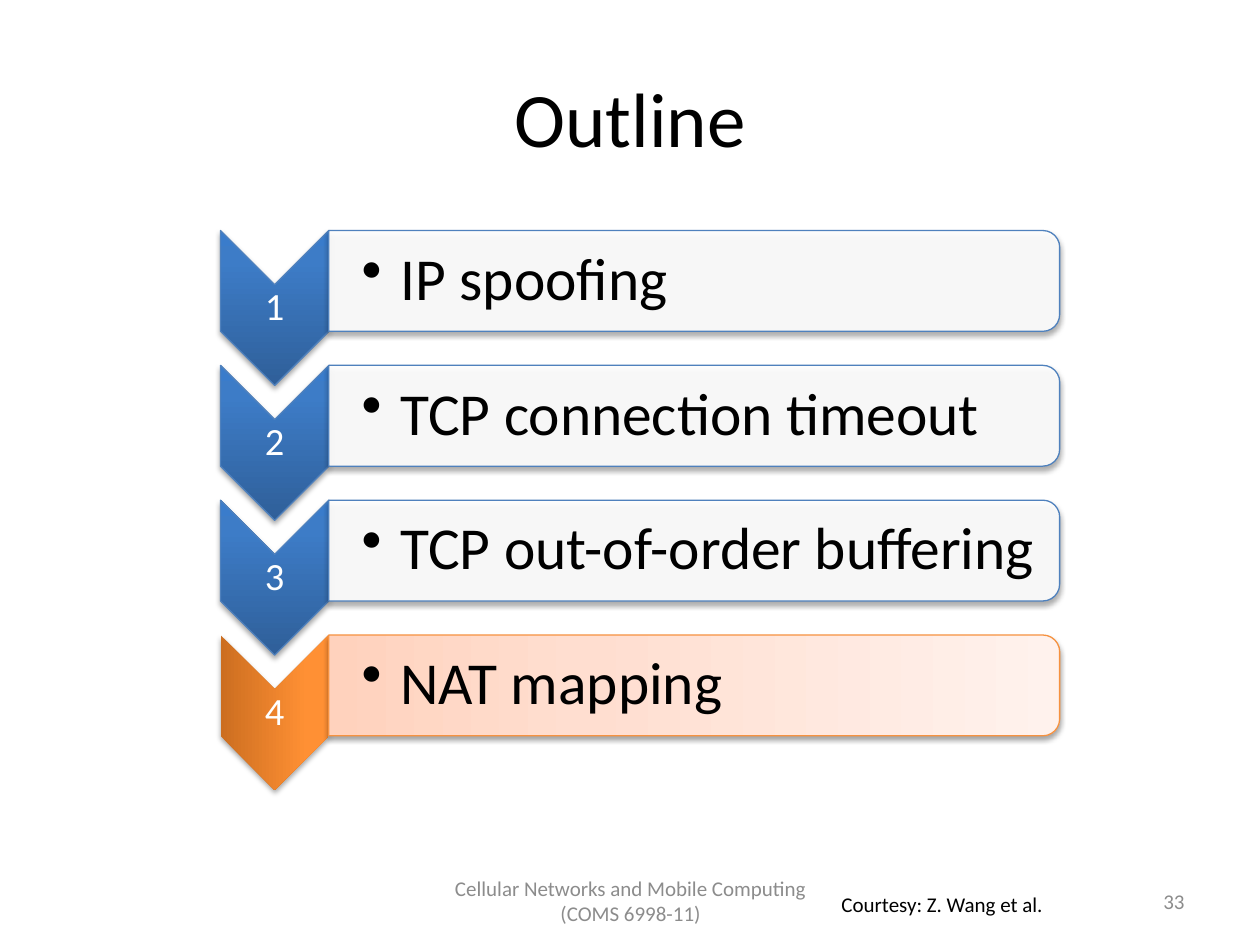
from lxml import etree
from pptx import Presentation
from pptx.dml.color import RGBColor
from pptx.enum import shapes, text
from pptx.oxml import ns
from pptx.util import Inches, Pt

FONT = "Calibri"
BLACK = RGBColor(0x00, 0x00, 0x00)
WHITE = RGBColor(0xFF, 0xFF, 0xFF)
GRAY = RGBColor(0x8C, 0x8C, 0x8C)
BLUE = RGBColor(0x4F, 0x81, 0xBD)
ORANGE = RGBColor(0xF6, 0x92, 0x40)
BLUE_STOPS = [(0, RGBColor(0x2F, 0x5F, 0x99)), (80, RGBColor(0x3D, 0x7C, 0xC7)),
              (100, RGBColor(0x3A, 0x7C, 0xCB))]
ORANGE_STOPS = [(0, RGBColor(0xCC, 0x6E, 0x20)), (80, RGBColor(0xFF, 0x90, 0x34)),
                (100, RGBColor(0xFF, 0x91, 0x36))]
PEACH_STOPS = [(0, RGBColor(0xFF, 0xD2, 0xBD)), (35, RGBColor(0xFF, 0xDE, 0xD0)),
               (100, RGBColor(0xFF, 0xF2, 0xED))]

TOPICS = ["IP spoofing", "TCP connection timeout",
          "TCP out-of-order buffering", "NAT mapping"]
CURRENT = 4
CHEVRON_WIDTH, CHEVRON_HEIGHT = 0.86, 1.23
BAR_HEIGHT, ROW_PITCH = 0.8, 1.07


def add_element(parent, tag, **attributes):
    element = etree.SubElement(parent, ns.qn(tag))
    for name, value in attributes.items():
        element.set(name, str(value))
    return element


def set_gradient(shape, stops, turns_with_shape):
    properties = shape._element.spPr
    gradient = add_element(properties, "a:gradFill", rotWithShape=int(turns_with_shape))
    stop_list = add_element(gradient, "a:gsLst")
    for position, color in stops:
        stop = add_element(stop_list, "a:gs", pos=position * 1000)
        add_element(stop, "a:srgbClr", val=color)
    add_element(gradient, "a:lin", ang=270 * 60000, scaled=0)
    properties.find(ns.qn("a:prstGeom")).addnext(gradient)


def set_outline(shape, color):
    if color is None:
        shape.line.fill.background()
    else:
        shape.line.color.rgb = color
        shape.line.width = Pt(0.75)


def set_shadow(shape):
    shape.shadow.inherit = False
    effects = shape._element.spPr.find(ns.qn("a:effectLst"))
    shadow = add_element(effects, "a:outerShdw", blurRad=Pt(3.1), dist=Pt(1.8),
                         dir=90 * 60000, rotWithShape=0)
    color = add_element(shadow, "a:srgbClr", val=BLACK)
    add_element(color, "a:alpha", val=35000)


def add_turned_shape(page, kind, left, top, width, height):
    shape = page.shapes.add_shape(
        kind, Inches(left + (width - height) / 2), Inches(top + (height - width) / 2),
        Inches(height), Inches(width))
    shape.rotation = 90
    return shape


def add_run(para, words, size, color):
    span = para.add_run()
    span.text = words
    span.font.name = FONT
    span.font.size = Pt(size)
    span.font.color.rgb = color


def add_label(page, left, top, width, height, words, size, color,
              align=text.PP_ALIGN.LEFT, anchor=text.MSO_ANCHOR.MIDDLE, wrap=True):
    box = page.shapes.add_textbox(Inches(left), Inches(top), Inches(width), Inches(height))
    frame = box.text_frame
    frame.word_wrap = wrap
    frame.vertical_anchor = anchor
    para = frame.paragraphs[0]
    para.alignment = align
    add_run(para, words, size, color)
    return frame


def tighten(frame, left_inset):
    frame.margin_left = Inches(left_inset)
    frame.margin_right = frame.margin_top = frame.margin_bottom = Inches(0.02)
    frame.paragraphs[0].line_spacing = 0.9


def add_bullet(para):
    properties = para._p.get_or_add_pPr()
    properties.set("lvl", "1")
    properties.set("marL", str(Inches(0.31)))
    properties.set("indent", str(Inches(-0.31)))
    add_element(properties, "a:buChar", char="•")


def add_title(page, left, top, width, height):
    title = page.shapes.title
    title.left, title.top = Inches(left), Inches(top)
    title.width, title.height = Inches(width), Inches(height)
    title.text_frame.vertical_anchor = text.MSO_ANCHOR.MIDDLE
    para = title.text_frame.paragraphs[0]
    para.alignment = text.PP_ALIGN.CENTER
    add_run(para, "Outline", 44, BLACK)


def add_topic(page, left, top, width, number, topic):
    current = number == CURRENT
    chevron = add_turned_shape(page, shapes.MSO_SHAPE.CHEVRON, left, top,
                               CHEVRON_WIDTH, CHEVRON_HEIGHT)
    set_gradient(chevron, ORANGE_STOPS if current else BLUE_STOPS, current)
    set_outline(chevron, None if current else BLUE)
    set_shadow(chevron)
    label = add_label(page, left, top + CHEVRON_WIDTH / 2, CHEVRON_WIDTH,
                      CHEVRON_HEIGHT - CHEVRON_WIDTH, str(number), 22, WHITE,
                      text.PP_ALIGN.CENTER)
    tighten(label, 0.02)

    bar_left = left + CHEVRON_WIDTH
    bar = add_turned_shape(page, shapes.MSO_SHAPE.ROUND_2_SAME_RECTANGLE, bar_left, top,
                           width - CHEVRON_WIDTH, BAR_HEIGHT)
    if current:
        set_gradient(bar, PEACH_STOPS, True)
    else:
        bar.fill.solid()
        bar.fill.fore_color.rgb = WHITE
        color = bar._element.spPr.find(".//" + ns.qn("a:srgbClr"))
        add_element(color, "a:alpha", val=90000)
    set_outline(bar, ORANGE if current else BLUE)
    set_shadow(bar)
    frame = add_label(page, bar_left, top + 0.04, width - CHEVRON_WIDTH - 0.04,
                      BAR_HEIGHT - 0.08, topic, 34, BLACK)
    tighten(frame, 0.26)
    add_bullet(frame.paragraphs[0])


def add_outline(page, left, top, width):
    for index, topic in enumerate(TOPICS):
        add_topic(page, left, top + index * ROW_PITCH, width, index + 1, topic)


def add_footer(page, top, height):
    add_label(page, 3.42, top, 3.17, height,
              "Cellular Networks and Mobile Computing (COMS 6998-11)", 12, GRAY,
              text.PP_ALIGN.CENTER)
    add_label(page, 6.58, top + 0.08, 1.83, 0.3, "Courtesy: Z. Wang et al.", 12, BLACK,
              anchor=text.MSO_ANCHOR.TOP, wrap=False)
    add_label(page, 7.17, top, 2.33, height, "33", 12, GRAY, text.PP_ALIGN.RIGHT)


def main():
    deck = Presentation()
    deck.slide_width, deck.slide_height = Inches(10), Inches(7.5)
    page = deck.slides.add_slide(deck.slide_layouts[5])
    add_title(page, 0.5, 0.3, 9, 1.25)
    add_outline(page, 1.75, 1.83, 6.66)
    add_footer(page, 6.95, 0.4)
    deck.save("out.pptx")


if __name__ == "__main__":
    main()
